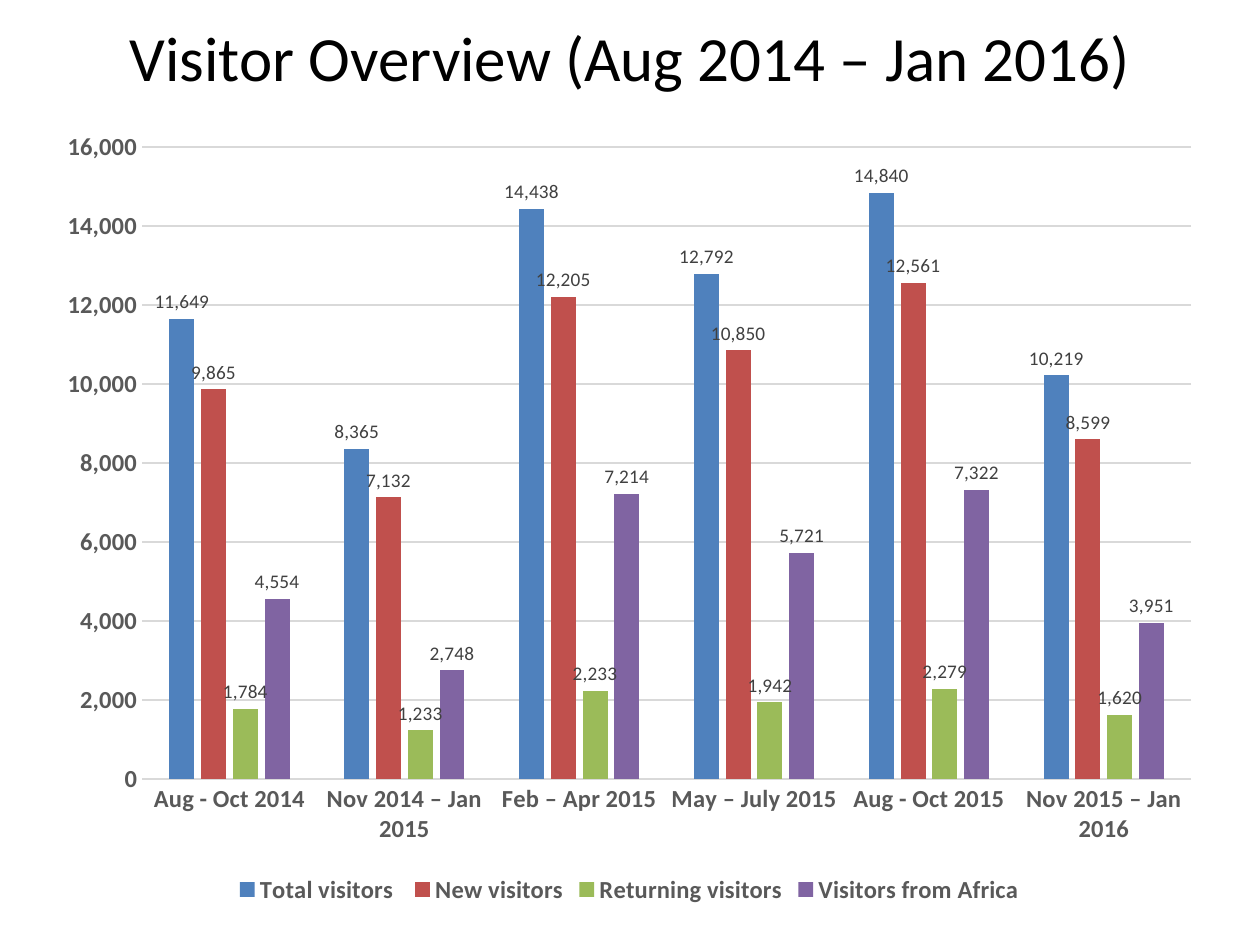
"""Build the visitor overview slide with a clustered column chart."""
from pptx import Presentation
from pptx.chart.data import CategoryChartData
from pptx.dml.color import RGBColor
from pptx.enum.chart import XL_CHART_TYPE as ChartType
from pptx.enum.chart import XL_LABEL_POSITION as LabelPosition
from pptx.enum.chart import XL_LEGEND_POSITION as LegendPosition
from pptx.enum.chart import XL_TICK_MARK as TickMark
from pptx.enum.text import MSO_ANCHOR, PP_ALIGN
from pptx.util import Inches, Pt

COLORS = {
    "title": "000000",
    "axis": "595959",
    "grid": "D9D9D9",
    "label": "404040",
    "total": "4F81BD",
    "new": "C0504D",
    "returning": "9BBB59",
    "africa": "8064A2",
}
NUMBER_FORMAT = "#,##0"

periods = [
    "Aug - Oct 2014", "Nov 2014 – Jan 2015", "Feb – Apr 2015",
    "May – July 2015", "Aug - Oct 2015", "Nov 2015 – Jan 2016",
]
visitor_groups = [
    ("Total visitors ", "total", [11649, 8365, 14438, 12792, 14840, 10219]),
    ("New visitors", "new", [9865, 7132, 12205, 10850, 12561, 8599]),
    ("Returning visitors", "returning", [1784, 1233, 2233, 1942, 2279, 1620]),
    ("Visitors from Africa", "africa", [4554, 2748, 7214, 5721, 7322, 3951]),
]


def style_font(font, size, color, bold=False):
    font.name = "Calibri"
    font.size = Pt(size)
    font.bold = bold
    font.color.rgb = RGBColor.from_string(COLORS[color])


def style_line(line):
    line.color.rgb = RGBColor.from_string(COLORS["grid"])
    line.width = Pt(0.75)


deck = Presentation()
deck.slide_width, deck.slide_height = Inches(10), Inches(7.5)
slide = deck.slides.add_slide(deck.slide_layouts[6])

heading = slide.shapes.add_textbox(Inches(0.5), Inches(0.14), Inches(9), Inches(0.61)).text_frame
heading.word_wrap = True
heading.vertical_anchor = MSO_ANCHOR.MIDDLE
heading.text = "Visitor Overview (Aug 2014 – Jan 2016)"
heading.paragraphs[0].alignment = PP_ALIGN.CENTER
style_font(heading.paragraphs[0].runs[0].font, 36, "title")

visits = CategoryChartData(number_format=NUMBER_FORMAT)
visits.categories = periods
for group, _, counts in visitor_groups:
    visits.add_series(group, counts)

chart = slide.shapes.add_chart(
    ChartType.COLUMN_CLUSTERED, Inches(0.35), Inches(0.92), Inches(9.29), Inches(6.3), visits
).chart
chart.has_title = False
style_font(chart.font, 10, "title")

chart.has_legend = True
chart.legend.position = LegendPosition.BOTTOM
chart.legend.include_in_layout = False
style_font(chart.legend.font, 14, "axis", bold=True)

for axis in (chart.category_axis, chart.value_axis):
    axis.major_tick_mark = axis.minor_tick_mark = TickMark.NONE
    style_font(axis.tick_labels.font, 14, "axis", bold=True)
style_line(chart.category_axis.format.line)

count_axis = chart.value_axis
count_axis.minimum_scale, count_axis.maximum_scale = 0, 16000
count_axis.major_unit = 2000
count_axis.tick_labels.number_format = NUMBER_FORMAT
count_axis.tick_labels.number_format_is_linked = False
count_axis.format.line.fill.background()
style_line(count_axis.major_gridlines.format.line)

columns = chart.plots[0]
columns.vary_by_categories = False
columns.gap_width = 219
columns.overlap = -27
for series, (_, color, _) in zip(columns.series, visitor_groups):
    series.invert_if_negative = False
    series.format.fill.solid()
    series.format.fill.fore_color.rgb = RGBColor.from_string(COLORS[color])
    labels = series.data_labels
    labels.show_value = True
    labels.position = LabelPosition.OUTSIDE_END
    labels.number_format = NUMBER_FORMAT
    labels.number_format_is_linked = False
    style_font(labels.font, 11, "label")

deck.save("out.pptx")
